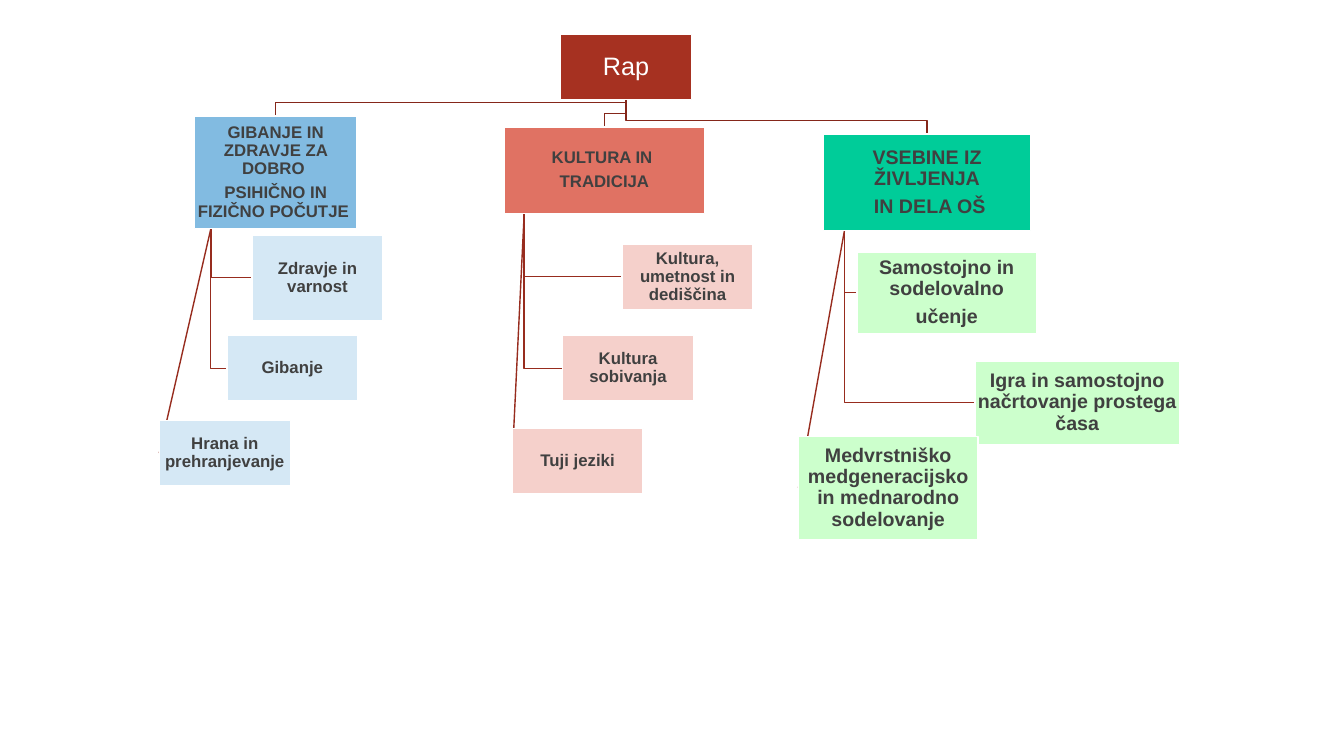
import pptx
import pptx.util
import pptx.dml.color
import pptx.enum.shapes
import pptx.enum.text
import pptx.oxml
import pptx.oxml.ns

Inches, Pt = pptx.util.Inches, pptx.util.Pt
RGBColor = pptx.dml.color.RGBColor

WHITE = RGBColor(0xFF, 0xFF, 0xFF)
TEXT = RGBColor(0x40, 0x40, 0x40)
ROOT_FILL = RGBColor(0xA6, 0x31, 0x21)
ROOT_LINE = RGBColor(0x85, 0x27, 0x1A)
CHILD_LINE = RGBColor(0x97, 0x2C, 0x1E)
BLUE, PALE_BLUE = RGBColor(0x82, 0xBB, 0xE1), RGBColor(0xD5, 0xE8, 0xF5)
RED, PALE_RED = RGBColor(0xE0, 0x72, 0x63), RGBColor(0xF5, 0xD0, 0xCB)
GREEN, PALE_GREEN = RGBColor(0x00, 0xCC, 0x99), RGBColor(0xCC, 0xFF, 0xCC)

# Boxes: (left, top, width, height), paragraphs
ROOT = (5.56, 0.34, 1.3, 0.65)
BRANCHES = [
    {"place": (1.93, 1.15, 1.61, 1.12), "size": 12, "fill": BLUE, "pale": PALE_BLUE,
     "lines": ["GIBANJE IN ZDRAVJE ZA DOBRO ", "PSIHIČNO IN FIZIČNO POČUTJE "],
     "children": [((2.5, 2.33, 1.3, 0.85), ["Zdravje in varnost"]),
                  ((2.25, 3.33, 1.3, 0.65), ["Gibanje"]),
                  ((1.58, 4.17, 1.3, 0.65), ["Hrana in prehranjevanje"])]},
    {"place": (5, 1.26, 1.99, 0.86), "size": 12, "fill": RED, "pale": PALE_RED,
     "lines": ["KULTURA IN ", "TRADICIJA"],
     "children": [((6.17, 2.42, 1.3, 0.65), ["Kultura, umetnost in dediščina"]),
                  ((5.58, 3.33, 1.3, 0.65), ["Kultura sobivanja"]),
                  ((5.08, 4.25, 1.3, 0.65), ["Tuji jeziki"])]},
    {"place": (8.17, 1.33, 2.05, 0.96), "size": 14, "fill": GREEN, "pale": PALE_GREEN,
     "lines": ["VSEBINE IZ ŽIVLJENJA", " IN DELA OŠ"],
     "children": [((8.5, 2.5, 1.78, 0.81), ["Samostojno in sodelovalno", "učenje"]),
                  ((9.67, 3.58, 2.03, 0.83), ["Igra in samostojno načrtovanje prostega časa"]),
                  ((7.92, 4.33, 1.78, 1.02),
                   ["Medvrstniško medgeneracijsko in mednarodno sodelovanje"])]},
]

deck = pptx.Presentation()
deck.slide_width, deck.slide_height = Inches(13.33), Inches(7.5)
page = deck.slides.add_slide(deck.slide_layouts[6])


def add_elbow(points, color):
    corners = [(Inches(x), Inches(y)) for x, y in points]
    builder = page.shapes.build_freeform(*corners[0], scale=1.0)
    builder.add_line_segments(corners[1:], close=False)
    elbow = builder.convert_to_shape()
    elbow.shadow.inherit = False
    elbow.fill.background()
    elbow.line.color.rgb = color
    elbow.line.width = Pt(1)


def add_box(place, lines, fill, size, color=TEXT, bold=True):
    box = page.shapes.add_shape(pptx.enum.shapes.MSO_SHAPE.RECTANGLE, *map(Inches, place))
    box.shadow.inherit = False
    box.fill.solid()
    box.fill.fore_color.rgb = fill
    box.line.color.rgb = WHITE
    box.line.width = Pt(1)
    frame = box.text_frame
    frame.word_wrap = True
    frame.vertical_anchor = pptx.enum.text.MSO_ANCHOR.MIDDLE
    for side in ("left", "top", "right", "bottom"):
        setattr(frame, f"margin_{side}", Inches(0.01))
    for number, line in enumerate(lines):
        para = frame.add_paragraph() if number else frame.paragraphs[0]
        layout = {"alignment": pptx.enum.text.PP_ALIGN.CENTER,
                  "line_spacing": 0.9, "space_after": Pt(0.35 * size)}
        for name, value in layout.items():
            setattr(para, name, value)
        span = para.add_run()
        span.text = line
        for name, value in {"name": "Arial", "size": Pt(size), "bold": bold}.items():
            setattr(span.font, name, value)
        span.font.color.rgb = color
    return box


# Lines, behind the boxes
root_x, root_bottom = ROOT[0] + ROOT[2] / 2, ROOT[1] + ROOT[3]
diagonals = []
for branch in BRANCHES:
    left, top, width, height = branch["place"]
    middle, bend = left + width / 2, top - 0.135
    add_elbow([(root_x, root_bottom), (root_x, bend), (middle, bend), (middle, top)], ROOT_LINE)

    trunk, bottom = left + width / 10, top + height
    for (child_left, child_top, _, child_height), _ in branch["children"][:2]:
        child_y = child_top + child_height / 2
        add_elbow([(trunk, bottom), (trunk, child_y), (child_left, child_y)], CHILD_LINE)

    last = branch["children"][2][0]
    diagonal = page.shapes.add_connector(
        pptx.enum.shapes.MSO_CONNECTOR.STRAIGHT, Inches(trunk), Inches(bottom),
        Inches(last[0]), Inches(last[1] + last[3] / 2))
    diagonal.line.color.rgb = CHILD_LINE
    diagonal.line.width = Pt(1)
    properties = diagonal._element.spPr
    properties.append(pptx.oxml.parse_xml(f"<a:effectLst {pptx.oxml.ns.nsdecls('a')}/>"))
    diagonals.append(diagonal)

# Boxes
add_box(ROOT, ["Rap"], ROOT_FILL, 18, WHITE, False)
for branch, diagonal in zip(BRANCHES, diagonals):
    add_box(branch["place"], branch["lines"], branch["fill"], branch["size"])
    for place, lines in branch["children"]:
        child = add_box(place, lines, branch["pale"], branch["size"])
    diagonal.end_connect(child, 1)

deck.save("out.pptx")
